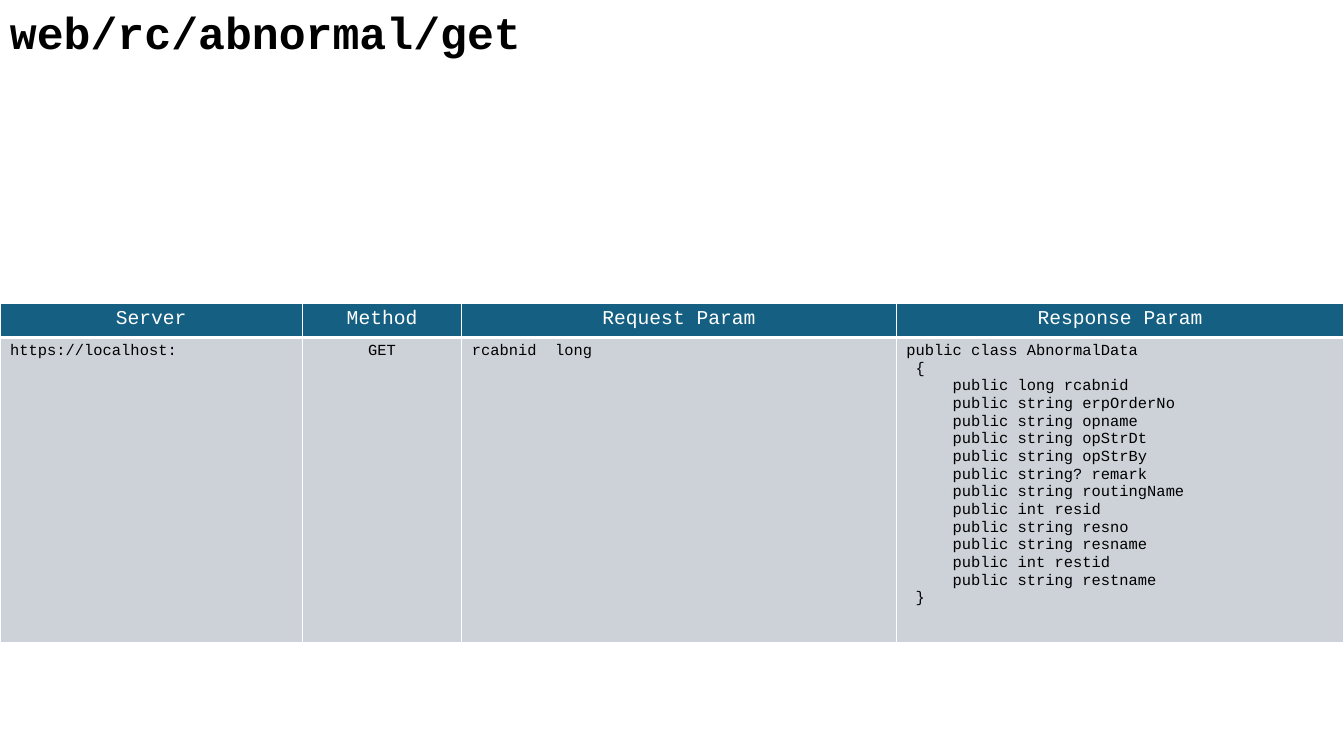
from dataclasses import dataclass

from lxml import etree
from pptx import Presentation
from pptx.dml.color import RGBColor
from pptx.enum.text import MSO_AUTO_SIZE, PP_ALIGN
from pptx.oxml.ns import qn
from pptx.util import Inches, Pt

LEFT, CENTER = PP_ALIGN.LEFT, PP_ALIGN.CENTER
GROW = MSO_AUTO_SIZE.SHAPE_TO_FIT_TEXT


@dataclass(frozen=True)
class Theme:
    font: str = "Courier New"
    ink: str = "000000"
    paper: str = "FFFFFF"
    header_fill: str = "156082"
    body_fill: str = "CCD2D8"
    title_size: int = 32
    header_size: int = 14
    body_size: int = 11
    border: int = 1
    header_rule: int = 3


class SlideBuilder:
    def __init__(self, slide, theme):
        self.s = slide
        self.theme = theme

    def add_lines(self, tf, text, size, color, bold=False, align=LEFT):
        """Fill a text frame with one paragraph per line of text."""
        style = {"name": self.theme.font, "size": Pt(size), "bold": bold}
        for i, line in enumerate(text.split("\n")):
            p = tf.add_paragraph() if i else tf.paragraphs[0]
            p.alignment = align
            r = p.add_run()
            r.text = line
            for name, value in style.items():
                setattr(r.font, name, value)
            r.font.color.rgb = RGBColor.from_string(color)

    def title(self, text, left, top, width, height):
        sp = self.s.shapes.add_textbox(*map(Inches, (left, top, width, height)))
        tf = sp.text_frame
        tf.word_wrap = True
        tf.auto_size = GROW
        self.add_lines(tf, text, self.theme.title_size, self.theme.ink, bold=True)

    def borders(self, cell, bottom):
        tc_pr = cell._tc.get_or_add_tcPr()
        widths = dict.fromkeys(("lnL", "lnR", "lnT"), self.theme.border)
        widths["lnB"] = bottom
        for side, width in widths.items():
            ln = etree.SubElement(tc_pr, qn(f"a:{side}"), w=str(Pt(width)))
            fill = etree.SubElement(ln, qn("a:solidFill"))
            etree.SubElement(fill, qn("a:srgbClr"), val=self.theme.paper)

    def table(self, rows, aligns, left, top, col_widths, row_heights):
        t = self.theme
        frame = self.s.shapes.add_table(
            len(rows), len(col_widths), Inches(left), Inches(top),
            Inches(sum(col_widths)), Inches(sum(row_heights)))
        tbl = frame.table
        tbl.first_row = tbl.horz_banding = False
        for col, width in zip(tbl.columns, col_widths):
            col.width = Inches(width)
        for row, height in zip(tbl.rows, row_heights):
            row.height = Inches(height)

        # The first row is the header, the rest are body rows
        header = (t.header_fill, t.header_size, t.paper, t.header_rule)
        body = (t.body_fill, t.body_size, t.ink, t.border)
        for i, texts in enumerate(rows):
            fill, size, color, bottom = body if i else header
            for j, text in enumerate(texts):
                cell = tbl.cell(i, j)
                self.borders(cell, bottom)
                cell.fill.solid()
                cell.fill.fore_color.rgb = RGBColor.from_string(fill)
                align = aligns[j] if i else CENTER
                self.add_lines(cell.text_frame, text, size, color, align=align)


RESPONSE = """public class AbnormalData
 {
     public long rcabnid
     public string erpOrderNo
     public string opname
     public string opStrDt
     public string opStrBy
     public string? remark
     public string routingName
     public int resid
     public string resno
     public string resname
     public int restid
     public string restname
 }"""

ENDPOINT = [
    ["Server", "Method", "Request Param", "Response Param"],
    ["https://localhost:", "GET", "rcabnid  long", RESPONSE],
]


def main():
    prs = Presentation()
    prs.slide_width, prs.slide_height = Inches(13.33), Inches(7.5)
    s = SlideBuilder(prs.slides.add_slide(prs.slide_layouts[6]), Theme())

    # Endpoint path
    s.title("web/rc/abnormal/get", 0, 0, 9.45, 0.64)

    # Request and response description
    s.table(ENDPOINT, [LEFT, CENTER, LEFT, LEFT], 0, 3.01,
            col_widths=[3, 1.58, 4.31, 4.44], row_heights=[0.34, 3.03])

    prs.save("out.pptx")


if __name__ == "__main__":
    main()
